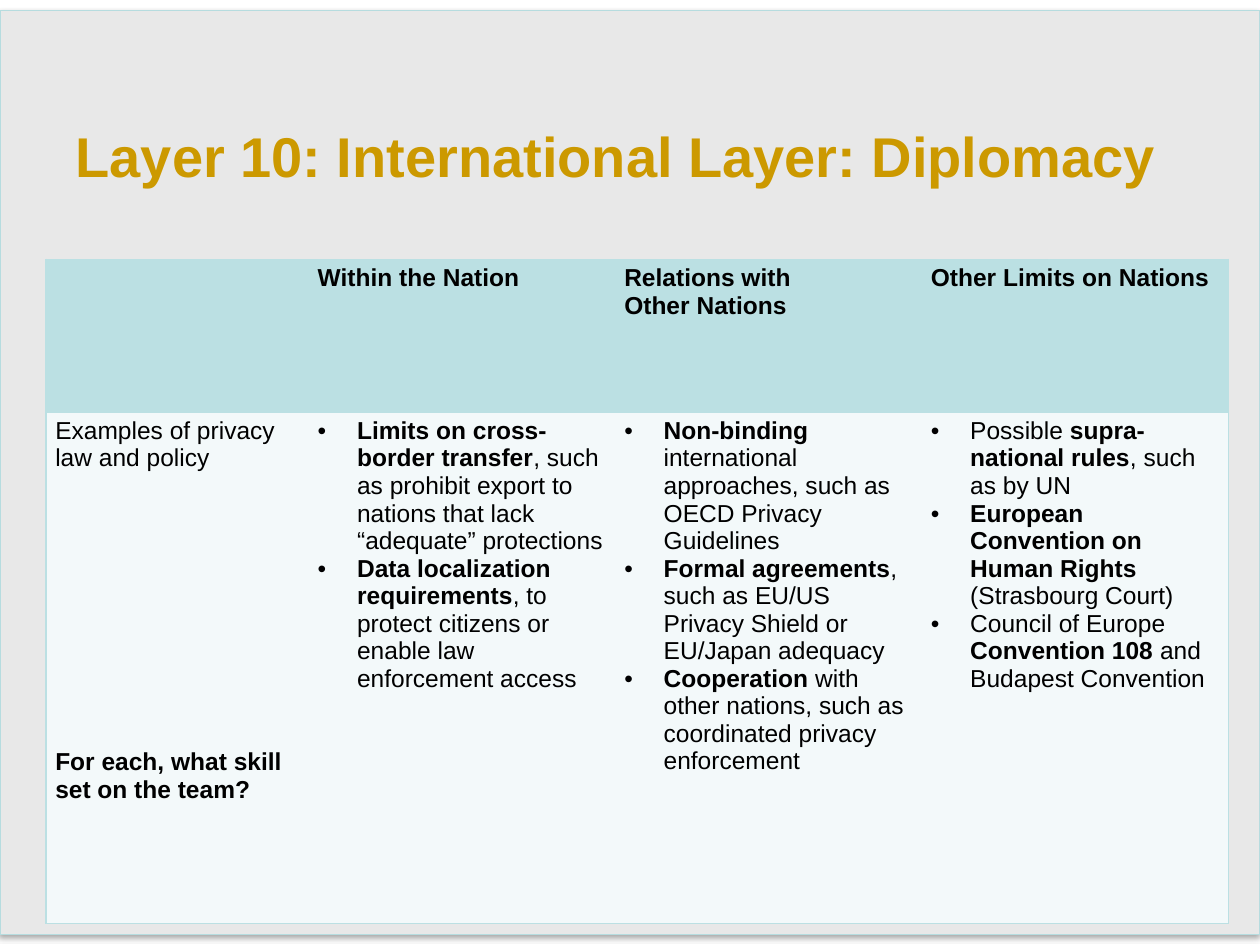
from lxml import etree
from pptx import Presentation
from pptx.dml.color import RGBColor
from pptx.enum import shapes, text
from pptx.oxml import parse_xml
from pptx.oxml.ns import nsdecls, qn
from pptx.util import Pt

THEME = {
    "font": "Arial", "title_size": 32, "cell_size": 14,
    "title": "CC9900", "ink": "000000", "panel": "E8E8E8", "panel_line": "B6DCDF",
    "header": "BBE0E3", "body": "F3F9FA", "border": "BBE0E3",
}

TITLE = "Layer 10: International Layer: Diplomacy"

# A paragraph is a list of (words, bold) spans.
HEADERS = [
    [],
    [[("Within the Nation", True)]],
    [[("Relations with", True)], [("Other Nations", True)]],
    [[("Other Limits on Nations", True)]],
]
EXAMPLES = [
    [
        [("Examples of privacy law and policy", False)],
        [("For each, what skill set on the team?", True)],
    ],
    [
        [("Limits on cross-border transfer", True),
         (", such as prohibit export to nations that lack “adequate” protections", False)],
        [("Data localization requirements", True),
         (", to protect citizens or enable law enforcement access", False)],
    ],
    [
        [("Non-binding", True),
         (" international approaches, such as OECD Privacy Guidelines", False)],
        [("Formal agreements", True),
         (", such as EU/US Privacy Shield or EU/Japan adequacy", False)],
        [("Cooperation", True),
         (" with other nations, such as coordinated privacy enforcement", False)],
    ],
    [
        [("Possible ", False), ("supra-national rules", True), (", such as by UN", False)],
        [("European Convention on Human Rights", True), (" (Strasbourg Court)", False)],
        [("Council of Europe ", False), ("Convention 108 ", True),
         ("and Budapest Convention", False)],
    ],
]

PAGE_SIZE = (720, 540)
PANEL = (0, 6, 720, 528)
TITLE_BOX = (36, 66, 648, 45.5)
TABLE_BOX = (26.4, 148.2, 675.6, 379.5)
LABEL_WIDTH = 150
HEADER_HEIGHT = 87.3
INDENT = 22.5
QUESTION_GAP = 158
MARGINS = {"margin_left": 5.2, "margin_right": 5.2, "margin_top": 2.9, "margin_bottom": 2.9}
PLAIN_TABLE_STYLE = "{2D5ABB26-0587-4C30-8999-92F81FD0307C}"


def points(values):
    return [Pt(value) for value in values]


def paint(fill, color):
    fill.solid()
    fill.fore_color.rgb = RGBColor.from_string(color)


def add_span(para, words, size, color, bold):
    span = para.add_run()
    span.text = words
    formats = {"name": THEME["font"], "size": Pt(size), "bold": bold}
    for name, value in formats.items():
        setattr(span.font, name, value)
    span.font.color.rgb = RGBColor.from_string(color)


def add_bullet(para):
    props = para._p.get_or_add_pPr()
    props.set("marL", str(Pt(INDENT)))
    props.set("indent", str(-Pt(INDENT)))
    etree.SubElement(props, qn("a:buFont")).set("typeface", THEME["font"])
    etree.SubElement(props, qn("a:buChar")).set("char", "•")


def add_borders(cell, sides):
    """Draw the given sides, listed in the order L, R, T, B."""
    props = cell._tc.get_or_add_tcPr()
    for place, side in enumerate(sides):
        props.insert(place, parse_xml(
            f'<a:ln{side} {nsdecls("a")} w="{Pt(1)}"><a:solidFill>'
            f'<a:srgbClr val="{THEME["border"]}"/></a:solidFill></a:ln{side}>'))


def fill_cell(cell, paragraphs, color, bulleted):
    for name, value in MARGINS.items():
        setattr(cell, name, Pt(value))
    paint(cell.fill, color)
    frame = cell.text_frame
    for number, spans in enumerate(paragraphs):
        para = frame.add_paragraph() if number else frame.paragraphs[0]
        if bulleted:
            add_bullet(para)
        for words, bold in spans:
            add_span(para, words, THEME["cell_size"], THEME["ink"], bold)


def add_panel(page):
    panel = page.shapes.add_shape(shapes.MSO_SHAPE.RECTANGLE, *points(PANEL))
    paint(panel.fill, THEME["panel"])
    paint(panel.line.fill, THEME["panel_line"])
    panel.line.width = Pt(0.75)
    panel._element.spPr.append(parse_xml(
        f'<a:effectLst {nsdecls("a")}><a:outerShdw blurRad="{Pt(3.1)}" dist="{Pt(1.8)}" '
        'dir="5400000" rotWithShape="0"><a:srgbClr val="000000"><a:alpha val="35000"/>'
        '</a:srgbClr></a:outerShdw></a:effectLst>'))
    page.shapes._spTree.insert(2, panel._element)


def add_title(page):
    title = page.shapes.title
    title.left, title.top, title.width, title.height = points(TITLE_BOX)
    frame = title.text_frame
    frame.word_wrap = True
    frame.auto_size = text.MSO_AUTO_SIZE.NONE
    frame.vertical_anchor = text.MSO_ANCHOR.MIDDLE
    para = frame.paragraphs[0]
    para.alignment = text.PP_ALIGN.LEFT
    add_span(para, TITLE, THEME["title_size"], THEME["title"], True)


def add_grid(page):
    rows = [HEADERS, EXAMPLES]
    last = len(HEADERS) - 1
    table = page.shapes.add_table(len(rows), len(HEADERS), *points(TABLE_BOX)).table
    table.first_row = table.horz_banding = False
    table._tbl.tblPr.find(qn("a:tableStyleId")).text = PLAIN_TABLE_STYLE

    width, height = TABLE_BOX[2:]
    for number, column in enumerate(table.columns):
        column.width = Pt((width - LABEL_WIDTH) / last if number else LABEL_WIDTH)
    for row, size in zip(table.rows, (HEADER_HEIGHT, height - HEADER_HEIGHT)):
        row.height = Pt(size)

    for r, (contents, color) in enumerate(zip(rows, (THEME["header"], THEME["body"]))):
        for c, paragraphs in enumerate(contents):
            cell = table.cell(r, c)
            fill_cell(cell, paragraphs, color, bulleted=r > 0 and c > 0)
            add_borders(cell, {0: "LTB", last: "RTB"}.get(c, "TB"))
    table.cell(1, 0).text_frame.paragraphs[1].space_before = Pt(QUESTION_GAP)


def main():
    deck = Presentation()
    deck.slide_width, deck.slide_height = points(PAGE_SIZE)
    page = deck.slides.add_slide(deck.slide_layouts[5])
    add_panel(page)
    add_title(page)
    add_grid(page)
    deck.save("out.pptx")


if __name__ == "__main__":
    main()
